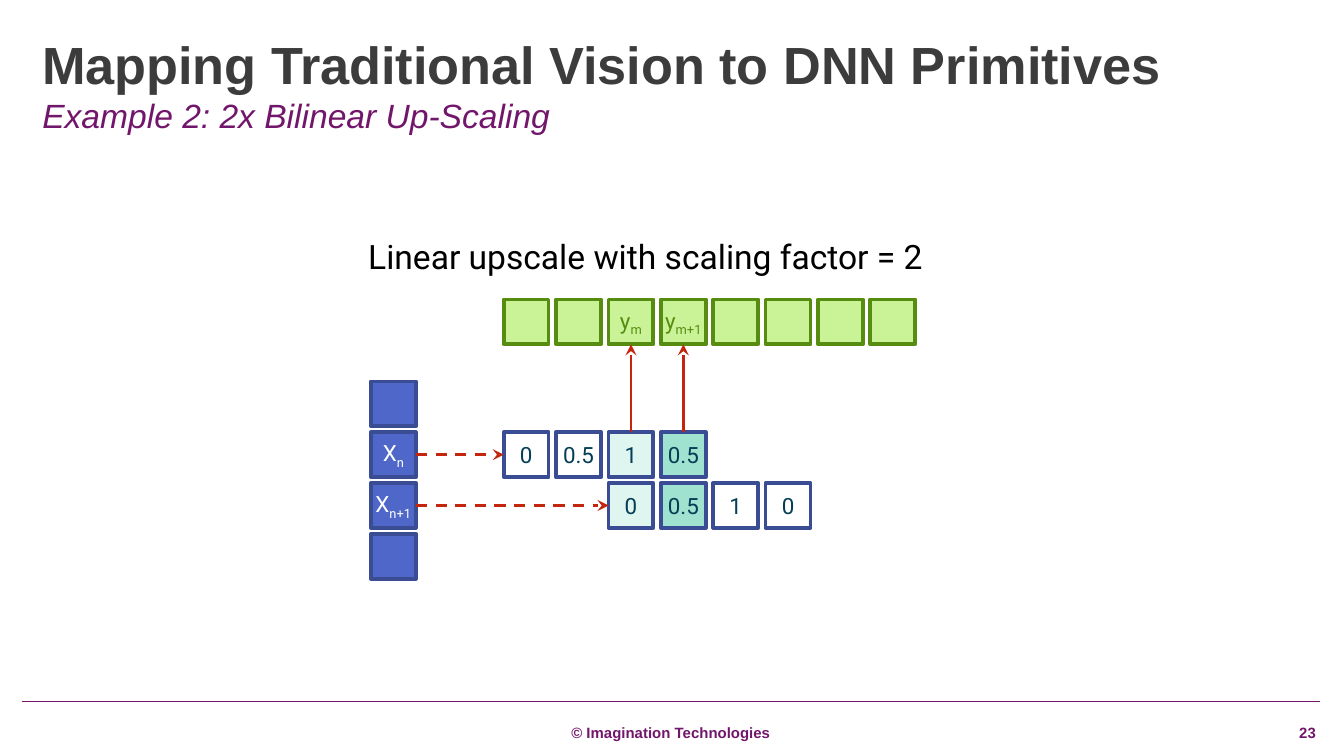
from dataclasses import dataclass

from lxml.etree import SubElement
from pptx import Presentation
from pptx.dml.color import RGBColor
from pptx.enum.dml import MSO_LINE_DASH_STYLE as Dash
from pptx.enum.shapes import MSO_CONNECTOR as Connector, MSO_SHAPE as Shape
from pptx.enum.text import MSO_ANCHOR as Anchor, PP_ALIGN as Align
from pptx.oxml.ns import qn
from pptx.util import Cm, Pt

PURPLE, RED, NAVY, GREEN = "72166B", "C3260C", "3A4C94", "568D11"
BLUE_FILL, GREEN_FILL, PALE, TEAL = "4E67C8", "CAF297", "DFF5EF", "9EE2CF"

# Grid of cells, in centimetres
CELL = 0.85
COLUMN_STEP, ROW_STEP = 0.99, 0.96
INPUT_LEFT, INPUT_TOP = 7.01, 7.21
GRID_LEFT, OUTPUT_TOP = 9.52, 5.66


@dataclass
class Cell:
    text: str = ""
    subscript: str = ""
    fill: str | None = None


@dataclass
class Style:
    line: str
    ink: str


INPUT, WEIGHT, OUTPUT = Style(NAVY, "FFFFFF"), Style(NAVY, "043D56"), Style(GREEN, GREEN)


def colour(value: str) -> RGBColor:
    return RGBColor.from_string(value)


def column_x(column: int) -> float:
    return GRID_LEFT + column * COLUMN_STEP


def row_y(row: int) -> float:
    return INPUT_TOP + row * ROW_STEP


def add_span(para, text: str, *, size: float, ink: str, font: str = "Arial",
             bold: bool = False, italic: bool = False, baseline: int = 0) -> None:
    span = para.add_run()
    span.text = text
    span.font.name, span.font.size = font, Pt(size)
    span.font.bold, span.font.italic = bold, italic
    span.font.color.rgb = colour(ink)
    if baseline:
        span._r.get_or_add_rPr().set("baseline", str(baseline * 1000))


def clear_margins(frame) -> None:
    frame.margin_left = frame.margin_top = frame.margin_right = frame.margin_bottom = 0


def add_text(slide, text: str, left: float, top: float, width: float, height: float, *,
             margins: bool = False, wrap: bool = True, spacing: float = 1.0, **style):
    box = slide.shapes.add_textbox(Cm(left), Cm(top), Cm(width), Cm(height))
    frame = box.text_frame
    frame.word_wrap = wrap
    if not margins:
        clear_margins(frame)
    para = frame.paragraphs[0]
    para.line_spacing = spacing
    add_span(para, text, **style)
    return para


def add_tabs(para, stops: list[tuple[float, str]]) -> None:
    tabs = SubElement(para._p.get_or_add_pPr(), qn("a:tabLst"))
    for position, align in stops:
        SubElement(tabs, qn("a:tab"), pos=str(Cm(position)), algn=align)


def add_cell(slide, cell: Cell, left: float, top: float, style: Style) -> None:
    box = slide.shapes.add_shape(Shape.RECTANGLE, Cm(left), Cm(top), Cm(CELL), Cm(CELL))
    box.shadow.inherit = False
    box.line.color.rgb, box.line.width = colour(style.line), Pt(2)
    if cell.fill:
        box.fill.solid()
        box.fill.fore_color.rgb = colour(cell.fill)
    else:
        box.fill.background()
    if not cell.text:
        return
    frame = box.text_frame
    clear_margins(frame)
    frame.vertical_anchor = Anchor.MIDDLE
    para = frame.paragraphs[0]
    para.alignment = Align.CENTER
    add_span(para, cell.text, size=12, ink=style.ink, font="Roboto")
    if cell.subscript:
        add_span(para, cell.subscript, size=12, ink=style.ink, font="Roboto", baseline=-25)


def add_row(slide, cells: list[Cell], first_column: int, top: float, style: Style) -> None:
    for column, cell in enumerate(cells, first_column):
        add_cell(slide, cell, column_x(column), top, style)


def add_line(slide, start: tuple[float, float], end: tuple[float, float], *, ink: str,
             width: float, dashed: bool = False, arrow: bool = False) -> None:
    line = slide.shapes.add_connector(Connector.STRAIGHT, *map(Cm, start + end))
    line.line.color.rgb, line.line.width = colour(ink), Pt(width)
    if dashed:
        line.line.dash_style = Dash.DASH
    if arrow:
        SubElement(line.line._get_or_add_ln(), qn("a:tailEnd"), type="stealth")
    SubElement(line._element.spPr, qn("a:effectLst"))


def main() -> None:
    deck = Presentation()
    deck.slide_width, deck.slide_height = Cm(25.4), Cm(14.29)
    slide = deck.slides.add_slide(deck.slide_layouts[6])

    # Footer
    footer = add_text(slide, "\t© Imagination Technologies\t\t23", 0.46, 13.72, 24.49, 0.3,
                      spacing=0.9, size=8, ink=PURPLE, bold=True)
    add_tabs(footer, [(12.22, "ctr"), (23.93, "r"), (24.41, "r")])
    add_line(slide, (0.41, 13.26), (24.94, 13.26), ink=PURPLE, width=0.5)

    # Headings
    add_text(slide, "Mapping Traditional Vision to DNN Primitives", 0.8, 0.79, 24.16, 0.89,
             spacing=0.85, size=28, ink="3C3C3C", bold=True)
    add_text(slide, "Example 2: 2x Bilinear Up-Scaling", 0.8, 1.8, 24.16, 0.61,
             size=18, ink=PURPLE, italic=True)
    add_text(slide, "Linear upscale with scaling factor = 2", 6.71, 4.34, 11.05, 1.02,
             margins=True, wrap=False, size=18, ink="000000", font="Roboto")

    # Input column
    inputs = [Cell(), Cell("X", "n"), Cell("X", "n+1"), Cell()]
    for row, cell in enumerate(inputs):
        cell.fill = BLUE_FILL
        add_cell(slide, cell, INPUT_LEFT, row_y(row), INPUT)

    # Weights, each row shifted by the scaling factor
    add_row(slide, [Cell("0"), Cell("0.5"), Cell("1", fill=PALE), Cell("0.5", fill=TEAL)],
            0, row_y(1), WEIGHT)
    add_row(slide, [Cell("0", fill=PALE), Cell("0.5", fill=TEAL), Cell("1"), Cell("0")],
            2, row_y(2), WEIGHT)

    # Output row
    labels = {2: "m", 3: "m+1"}
    outputs = [Cell("y" if column in labels else "", labels.get(column, ""), GREEN_FILL)
               for column in range(8)]
    add_row(slide, outputs, 0, OUTPUT_TOP, OUTPUT)

    # Arrows from inputs to weights, then from weights to outputs
    for row, column in ((1, 0), (2, 2)):
        middle = row_y(row) + CELL / 2
        add_line(slide, (INPUT_LEFT + CELL, middle), (column_x(column), middle),
                 ink=RED, width=1.5, dashed=True, arrow=True)
    for column in labels:
        middle = column_x(column) + CELL / 2
        add_line(slide, (middle, row_y(1)), (middle, OUTPUT_TOP + CELL),
                 ink=RED, width=1.5, arrow=True)

    deck.save("out.pptx")


if __name__ == "__main__":
    main()
